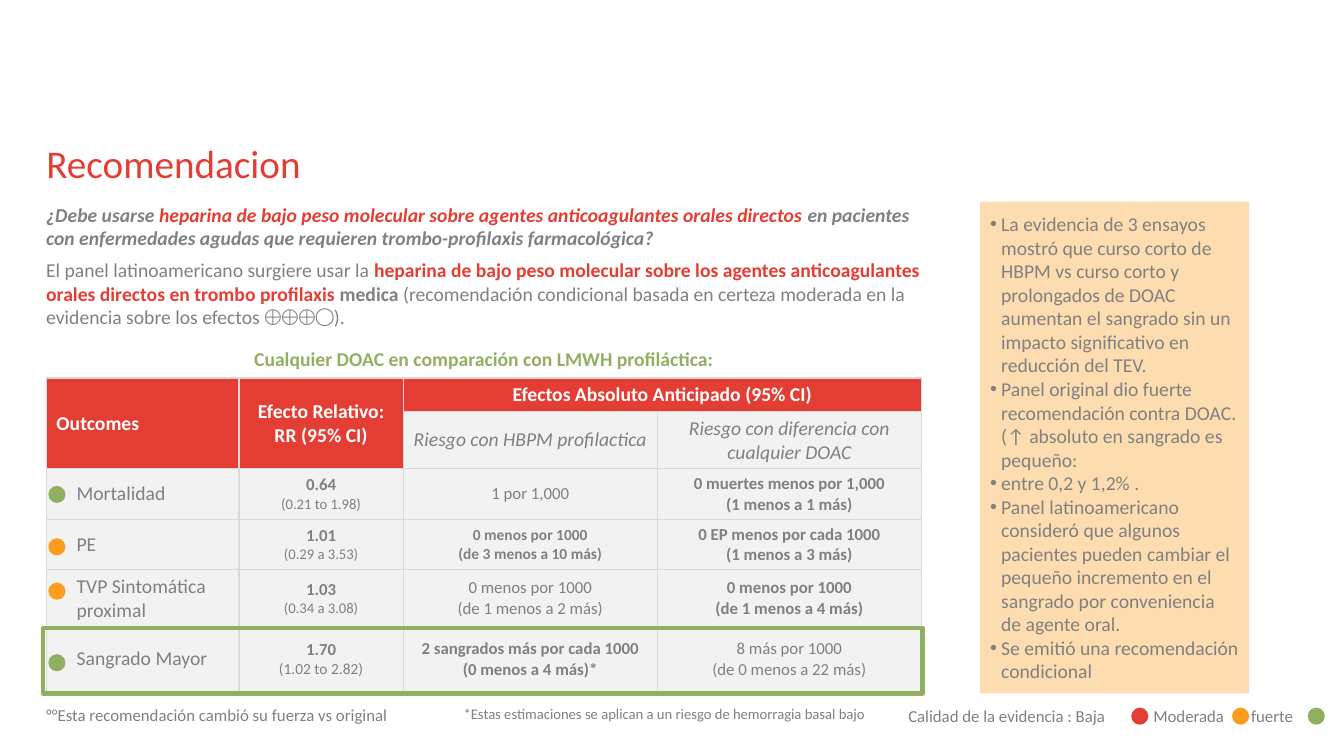
from dataclasses import dataclass

from lxml.etree import SubElement
from pptx import Presentation
from pptx.dml.color import RGBColor
from pptx.enum.shapes import MSO_SHAPE
from pptx.enum.text import MSO_ANCHOR, MSO_AUTO_SIZE, PP_ALIGN
from pptx.oxml.ns import qn
from pptx.util import Pt

EMU_PER_PX = 9144
FONT = "Calibri"
COLORS = {
    "red": "E43D33", "green": "91AF61", "orange": "FA9D1C", "gray": "808080",
    "white": "FFFFFF", "cell": "F2F2F2", "border": "D9D9D9", "peach": "FDDDB0",
}


@dataclass(frozen=True)
class Segment:
    text: str
    color: str = "gray"
    bold: bool = False
    font: str = FONT


@dataclass(frozen=True)
class Line:
    text: str
    size: float = 12
    bold: bool = False
    italic: bool = False
    color: str = "gray"


@dataclass(frozen=True)
class Cell:
    row: int
    column: int
    lines: tuple[Line, ...]
    fill: str = "cell"
    row_span: int = 1
    column_span: int = 1


@dataclass(frozen=True)
class Dot:
    left: int
    top: int
    color: str


def px(value: int) -> int:
    return value * EMU_PER_PX


def rgb(name: str) -> RGBColor:
    return RGBColor.from_string(COLORS[name])


def place(shape, left: int, top: int, width: int, height: int) -> None:
    shape.left, shape.top, shape.width, shape.height = map(px, (left, top, width, height))


def style(font, size: float, color: str = "gray", bold: bool = False, italic: bool = False) -> None:
    font.name, font.size, font.bold, font.italic = FONT, Pt(size), bold, italic
    font.color.rgb = rgb(color)


def write_lines(frame, lines, alignment=PP_ALIGN.LEFT) -> None:
    for index, line in enumerate(lines):
        paragraph = frame.add_paragraph() if index else frame.paragraphs[0]
        paragraph.text = line.text
        paragraph.alignment = alignment
        style(paragraph.font, line.size, line.color, line.bold, line.italic)


def add_text_box(slide, left: int, top: int, width: int, height: int):
    frame = slide.shapes.add_textbox(*map(px, (left, top, width, height))).text_frame
    frame.word_wrap = True
    return frame


def fill_heading(placeholder, line: Line, box: tuple, alignment) -> None:
    """Move a placeholder to box and set one line in it without insets or bullet."""
    place(placeholder, *box)
    frame = placeholder.text_frame
    frame.auto_size = MSO_AUTO_SIZE.NONE
    frame.vertical_anchor = MSO_ANCHOR.TOP
    frame.margin_left = frame.margin_top = frame.margin_right = frame.margin_bottom = 0
    paragraph = frame.paragraphs[0]
    paragraph.space_before = Pt(0)
    properties = paragraph._p.get_or_add_pPr()
    properties.set("marL", "0")
    properties.set("indent", "0")
    SubElement(properties, qn("a:buNone"))
    write_lines(frame, [line], alignment)


def fill_evidence_list(placeholder, items: list[str]) -> None:
    place(placeholder, 972, 200, 267, 488)
    placeholder.fill.solid()
    placeholder.fill.fore_color.rgb = rgb("peach")
    frame = placeholder.text_frame
    frame.auto_size = MSO_AUTO_SIZE.NONE
    frame.vertical_anchor = MSO_ANCHOR.MIDDLE
    for index, item in enumerate(items):
        paragraph = frame.add_paragraph() if index else frame.paragraphs[0]
        paragraph.text = item
        paragraph.space_before = Pt(0)
        properties = paragraph._p.get_or_add_pPr()
        properties.set("marL", str(px(11)))
        properties.set("indent", str(px(-11)))
        SubElement(properties, qn("a:buChar"), char="•")
        style(paragraph.font, 14)


def add_segments(paragraph, segments: list[Segment], italic: bool = False) -> None:
    paragraph.font.size, paragraph.font.italic = Pt(14), italic
    for segment in segments:
        run = paragraph.add_run()
        run.text = segment.text
        style(run.font, 14, segment.color, segment.bold, italic)
        run.font.name = segment.font


def add_borders(cell) -> None:
    properties = cell._tc.get_or_add_tcPr()
    for side in ("lnL", "lnR", "lnT", "lnB"):
        line = SubElement(properties, qn(f"a:{side}"), w=str(Pt(1)))
        SubElement(SubElement(line, qn("a:solidFill")), qn("a:srgbClr"), val=COLORS["border"])


def add_outcome_table(slide, cells: list[Cell]) -> None:
    widths, heights = (191, 163, 252, 262), (32, 54, 49, 49, 54, 64)
    table = slide.shapes.add_table(
        len(heights), len(widths), px(46), px(375), px(sum(widths)), px(sum(heights))).table
    for column, width in zip(table.columns, widths):
        column.width = px(width)
    for row, height in zip(table.rows, heights):
        row.height = px(height)
    for cell in table.iter_cells():
        add_borders(cell)
        cell.fill.solid()
        cell.fill.fore_color.rgb = rgb("cell")
    for item in cells:
        cell = table.cell(item.row, item.column)
        if item.row_span > 1 or item.column_span > 1:
            cell.merge(table.cell(item.row + item.row_span - 1, item.column + item.column_span - 1))
        cell.fill.fore_color.rgb = rgb(item.fill)
        cell.vertical_anchor = MSO_ANCHOR.MIDDLE
        if item.column == 0 and item.row > 1:
            cell.margin_left = px(30)
        write_lines(cell.text_frame, item.lines, PP_ALIGN.CENTER if item.column else PP_ALIGN.LEFT)


def add_dot(slide, dot: Dot) -> None:
    shape = slide.shapes.add_shape(MSO_SHAPE.OVAL, *map(px, (dot.left, dot.top, 17, 17)))
    shape.shadow.inherit = False
    shape.fill.solid()
    shape.fill.fore_color.rgb = rgb(dot.color)
    shape.line.fill.background()


def header(*texts: str) -> tuple[Line, ...]:
    return tuple(Line(text, 14, True, color="white") for text in texts)


def pair(first: str, second: str, bold: bool = False, size: float = 12) -> tuple[Line, ...]:
    return Line(first, size, bold), Line(second, size, bold)


def ratio(value: str, interval: str, size: float = 10.5) -> tuple[Line, ...]:
    return Line(value, 12, True), Line(interval, size)


HEADER_CELLS = [
    Cell(0, 0, header("Outcomes"), "red", row_span=2),
    Cell(0, 1, header("Efecto Relativo:", "RR (95% CI)"), "red", row_span=2),
    Cell(0, 2, header("Efectos Absoluto Anticipado (95% CI)"), "red", column_span=2),
    Cell(1, 2, (Line("Riesgo con HBPM profilactica", 14, italic=True),)),
    Cell(1, 3, (Line("Riesgo con diferencia con cualquier DOAC", 14, italic=True),)),
]
OUTCOMES = [
    ("Mortalidad", ratio("0.64", "(0.21 to 1.98)"), (Line("1 por 1,000"),),
     pair("0 muertes menos por 1,000", "(1 menos a 1 más)", True)),
    ("PE", ratio("1.01", "(0.29 a 3.53)"),
     pair("0 menos por 1000", "(de 3 menos a 10 más)", True, 11),
     pair("0 EP menos por cada 1000", "(1 menos a 3 más)", True)),
    ("TVP Sintomática proximal", ratio("1.03", "(0.34 a 3.08)"),
     pair("0 menos por 1000", "(de 1 menos a 2 más)"),
     pair("0 menos por 1000", "(de 1 menos a 4 más)", True)),
    ("Sangrado Mayor", ratio("1.70", "(1.02 to 2.82)", 11),
     pair("2 sangrados más por cada 1000", "(0 menos a 4 más)*", True),
     pair("8 más por 1000", "(de 0 menos a 22 más)")),
]
EVIDENCE = [
    "La evidencia de 3 ensayos mostró que curso corto de HBPM vs curso corto y prolongados de "
    "DOAC aumentan el sangrado sin un impacto significativo en reducción del TEV.",
    "Panel original dio fuerte recomendación contra DOAC. (↑ absoluto en sangrado es pequeño:",
    "entre 0,2 y 1,2% .",
    "Panel latinoamericano consideró que algunos pacientes pueden cambiar el pequeño "
    "incremento en el sangrado por conveniencia de agente oral.",
    "Se emitió una recomendación condicional",
]
QUESTION = [
    Segment("¿Debe usarse ", bold=True),
    Segment("heparina de bajo peso molecular sobre agentes anticoagulantes orales directos ", "red", True),
    Segment("en pacientes con enfermedades agudas que requieren trombo-profilaxis farmacológica?", bold=True),
]
ANSWER = [
    Segment("El panel latinoamericano surgiere usar la "),
    Segment("heparina de bajo peso molecular sobre los agentes anticoagulantes orales directos "
            "en trombo profilaxis ", "red", True),
    Segment("medica ", bold=True),
    Segment("(recomendación condicional basada en certeza moderada en la evidencia sobre los efectos "),
    Segment("⨁⨁⨁◯", font="Times New Roman"),
    Segment(")."),
]
DOTS = [
    Dot(1122, 702, "red"), Dot(1222, 702, "orange"), Dot(1297, 702, "green"),
    Dot(48, 482, "green"), Dot(48, 534, "orange"), Dot(48, 578, "orange"), Dot(48, 649, "green"),
]


def main() -> None:
    presentation = Presentation()
    presentation.slide_width, presentation.slide_height = px(1333), px(750)
    slide = presentation.slides.add_slide(presentation.slide_layouts[3])
    title, caption, evidence = slide.placeholders
    fill_heading(title, Line("Recomendacion", 28, color="red"), (46, 138, 1200, 46), PP_ALIGN.LEFT)
    fill_heading(caption, Line("Cualquier DOAC en comparación con LMWH profiláctica:", 14, True, color="green"),
                 (46, 344, 868, 36), PP_ALIGN.CENTER)
    fill_evidence_list(evidence, EVIDENCE)

    introduction = add_text_box(slide, 36, 196, 893, 136)
    introduction.paragraphs[0].space_after = Pt(6)
    add_segments(introduction.paragraphs[0], QUESTION, italic=True)
    add_segments(introduction.add_paragraph(), ANSWER)

    outcome_cells = [Cell(row, column, (Line(content, 14),) if column == 0 else content)
                     for row, outcome in enumerate(OUTCOMES, start=2)
                     for column, content in enumerate(outcome)]
    add_outcome_table(slide, HEADER_CELLS + outcome_cells)
    highlight = slide.shapes.add_shape(MSO_SHAPE.RECTANGLE, *map(px, (43, 623, 872, 65)))
    highlight.shadow.inherit = False
    highlight.fill.background()
    highlight.line.color.rgb = rgb("green")
    highlight.line.width = Pt(3)

    write_lines(add_text_box(slide, 36, 694, 391, 30),
                [Line("°°Esta recomendación cambió su fuerza vs original")])
    write_lines(add_text_box(slide, 450, 694, 430, 28),
                [Line("*Estas estimaciones se aplican a un riesgo de hemorragia basal bajo", 10.5)])
    legend = add_text_box(slide, 891, 695, 442, 30)
    tabs = SubElement(legend.paragraphs[0]._p.get_or_add_pPr(), qn("a:tabLst"))
    for position in (243, 340):
        SubElement(tabs, qn("a:tab"), pos=str(px(position)), algn="l")
    write_lines(legend, [Line("Calidad de la evidencia : Baja\tModerada\tfuerte")])
    for dot in DOTS:
        add_dot(slide, dot)
    presentation.save("out.pptx")


if __name__ == "__main__":
    main()
